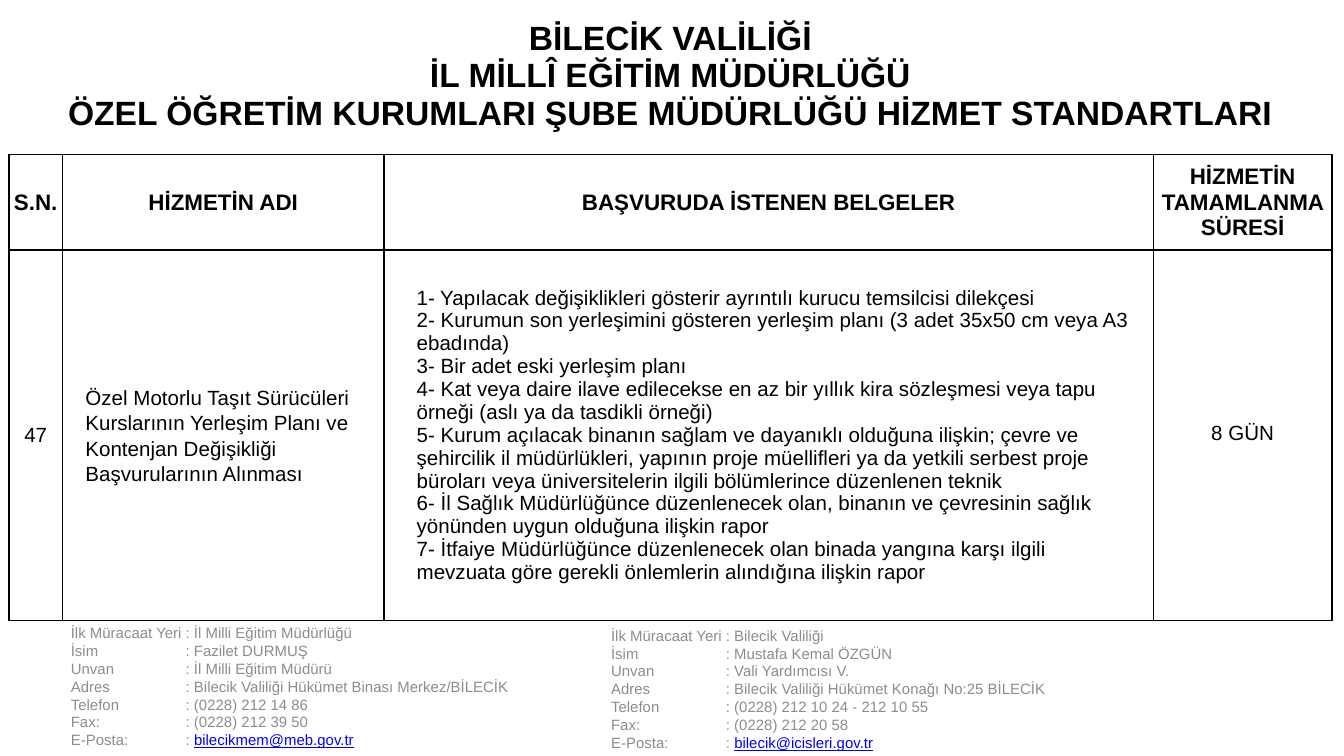
import pptx
import pptx.dml.color
import pptx.enum.text
import pptx.oxml
import pptx.oxml.ns
import pptx.util
from lxml import etree

Cm, Pt = pptx.util.Cm, pptx.util.Pt
RGB = pptx.dml.color.RGBColor.from_string
ALIGN = pptx.enum.text.PP_ALIGN
ANCHOR = pptx.enum.text.MSO_ANCHOR
qn = pptx.oxml.ns.qn

COLORS = {"text": "000000", "border": "000000", "muted": "8C8C8C", "mail": "0000FF"}
FONT = "Arial"

TITLE = [
    "BİLECİK VALİLİĞİ",
    "İL MİLLÎ EĞİTİM MÜDÜRLÜĞÜ",
    "ÖZEL ÖĞRETİM KURUMLARI ŞUBE MÜDÜRLÜĞÜ HİZMET STANDARTLARI",
]
HEADERS = ["S.N.", "HİZMETİN ADI", "BAŞVURUDA İSTENEN BELGELER", "HİZMETİN TAMAMLANMA SÜRESİ"]
SERVICE = (
    "Özel Motorlu Taşıt Sürücüleri Kurslarının Yerleşim Planı ve "
    "Kontenjan Değişikliği Başvurularının Alınması"
)
DOCUMENTS = [
    "1- Yapılacak değişiklikleri gösterir ayrıntılı kurucu temsilcisi dilekçesi",
    "2- Kurumun son yerleşimini gösteren yerleşim planı (3 adet 35x50 cm veya A3 ebadında)",
    "3- Bir adet eski yerleşim planı",
    "4- Kat veya daire ilave edilecekse en az bir yıllık kira sözleşmesi veya tapu örneği "
    "(aslı ya da tasdikli örneği)",
    "5- Kurum açılacak binanın sağlam ve dayanıklı olduğuna ilişkin; çevre ve şehircilik il "
    "müdürlükleri, yapının proje müellifleri ya da yetkili serbest proje büroları veya "
    "üniversitelerin ilgili bölümlerince düzenlenen teknik",
    "6- İl Sağlık Müdürlüğünce düzenlenecek olan, binanın ve çevresinin sağlık yönünden "
    "uygun olduğuna ilişkin rapor",
    "7- İtfaiye Müdürlüğünce düzenlenecek olan binada yangına karşı ilgili mevzuata göre "
    "gerekli önlemlerin alındığına ilişkin rapor",
]
CONTACT_LABELS = ["İlk Müracaat Yeri", "İsim", "Unvan", "Adres", "Telefon", "Fax:", "E-Posta:"]
DIRECTORATE = [
    "İl Milli Eğitim Müdürlüğü", "Fazilet DURMUŞ", "İl Milli Eğitim Müdürü",
    "Bilecik Valiliği Hükümet Binası Merkez/BİLECİK",
    "(0228) 212 14 86", "(0228) 212 39 50", "bilecikmem@meb.gov.tr",
]
GOVERNORSHIP = [
    "Bilecik Valiliği", "Mustafa Kemal ÖZGÜN", "Vali Yardımcısı V.",
    "Bilecik Valiliği Hükümet Konağı No:25 BİLECİK",
    "(0228) 212 10 24 - 212 10 55", "(0228) 212 20 58", "bilecik@icisleri.gov.tr",
]


def set_font(p, size, color, bold=False):
    p.font.name, p.font.size, p.font.bold = FONT, Pt(size), bold
    p.font.color.rgb = RGB(COLORS[color])


def set_borders(cell, visible):
    """Draw the sides named in visible (letters of LRTB) and hide the others."""
    tcPr = cell._tc.get_or_add_tcPr()
    for side in "LRTB":
        ln = etree.SubElement(tcPr, qn(f"a:ln{side}"), w=str(Pt(1)))
        if side in visible:
            fill = etree.SubElement(ln, qn("a:solidFill"))
            etree.SubElement(fill, qn("a:srgbClr"), val=COLORS["border"])
        else:
            etree.SubElement(ln, qn("a:noFill"))


def fill_cell(cell, lines, size, bold=False, align=ALIGN.CENTER, indent=0, spacing=None, inset=None):
    cell.vertical_anchor = ANCHOR.MIDDLE
    if inset is not None:
        cell.margin_left = cell.margin_right = cell.margin_top = cell.margin_bottom = Cm(inset)
    tf = cell.text_frame
    for i, line in enumerate(lines):
        p = tf.paragraphs[0] if i == 0 else tf.add_paragraph()
        p.text = line
        p.alignment = align
        p.line_spacing = spacing
        p._p.get_or_add_pPr().set("marL", str(Cm(indent)))
        set_font(p, size, "text", bold)


def add_standards_table(slide, left, top, widths, heights):
    table = slide.shapes.add_table(
        len(heights), len(widths), Cm(left), Cm(top), Cm(sum(widths)), Cm(sum(heights))
    ).table
    table.first_row = table.horz_banding = False
    for column, width in zip(table.columns, widths):
        column.width = Cm(width)
    for i, (row, height) in enumerate(zip(table.rows, heights)):
        row.height = Cm(height)
        for cell in row.cells:
            set_borders(cell, "B" if i == 0 else "LRTB")
            cell.fill.background()

    table.cell(0, 0).merge(table.cell(0, len(widths) - 1))
    fill_cell(table.cell(0, 0), TITLE, 18, bold=True, inset=0)
    for j, header in enumerate(HEADERS):
        fill_cell(table.cell(1, j), [header], 12, bold=True, inset=0)
    fill_cell(table.cell(2, 0), ["47"], 11, inset=0)
    fill_cell(table.cell(2, 1), [SERVICE], 11, align=ALIGN.LEFT, indent=0.18, spacing=1.1)
    fill_cell(table.cell(2, 2), DOCUMENTS, 11, align=ALIGN.LEFT, indent=0.36)
    fill_cell(table.cell(2, 3), ["8 GÜN"], 11, spacing=Pt(10))


def add_contact(slide, left, top, width, height, values):
    tf = slide.shapes.add_textbox(Cm(left), Cm(top), Cm(width), Cm(height)).text_frame
    tf.word_wrap = True
    tf.vertical_anchor = ANCHOR.BOTTOM
    for i, (label, value) in enumerate(zip(CONTACT_LABELS, values)):
        p = tf.paragraphs[0] if i == 0 else tf.add_paragraph()
        tabs = etree.SubElement(p._p.get_or_add_pPr(), qn("a:tabLst"))
        etree.SubElement(tabs, qn("a:tab"), pos=str(Cm(2.17)), algn="l")
        set_font(p, 8, "muted")
        p.add_run().text = f"{label}\t: "
        r = p.add_run()
        r.text = value
        if "@" in value:
            r.font.underline = True
            r.font.color.rgb = RGB(COLORS["mail"])


def main():
    prs = pptx.Presentation()
    prs.slide_width, prs.slide_height = Cm(25.4), Cm(14.28)
    slide = prs.slides.add_slide(prs.slide_layouts[6])
    add_contact(slide, 1.09, 11.73, 11.99, 2.54, DIRECTORATE)
    add_contact(slide, 11.3, 11.78, 11.99, 2.54, GOVERNORSHIP)
    add_standards_table(slide, 0.17, -0.05, [1.01, 6.08, 14.54, 3.37], [2.97, 1.8, 7])
    prs.save("out.pptx")


if __name__ == "__main__":
    main()
